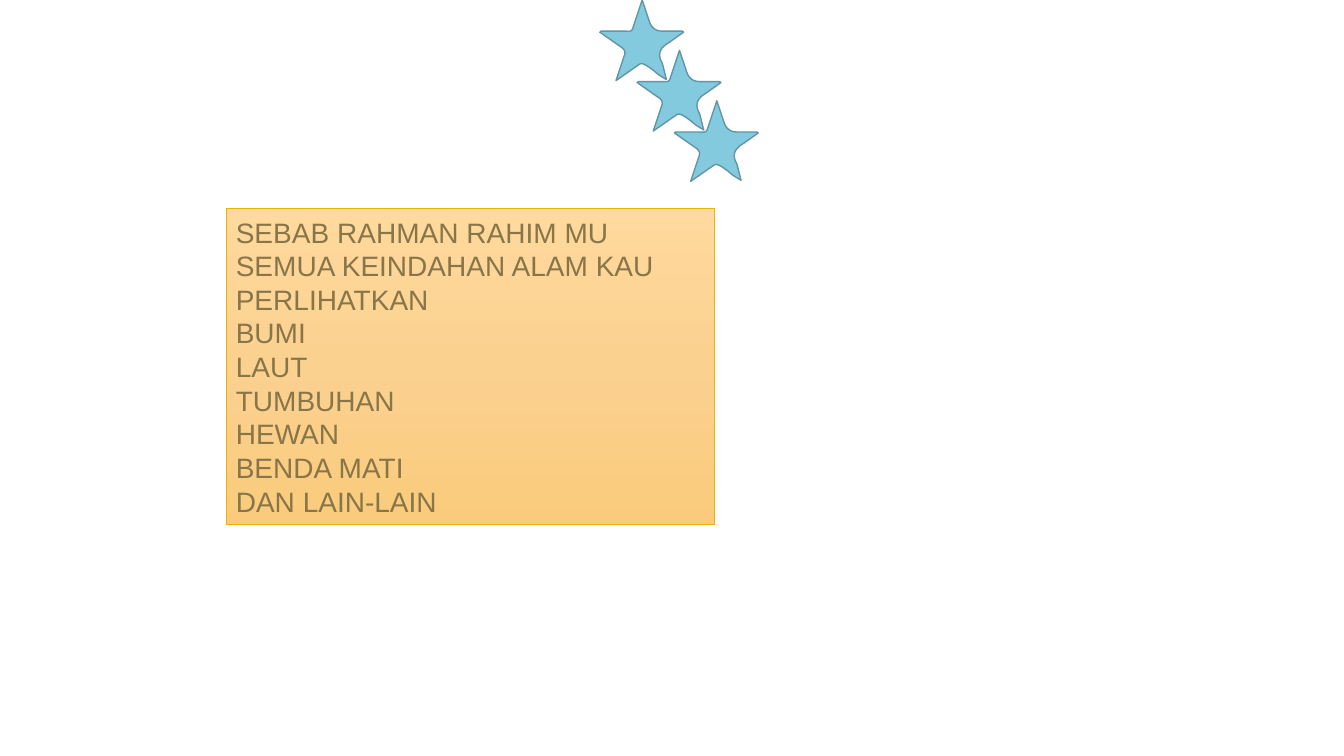
import copy

import pptx
import pptx.util
import pptx.dml.color
import pptx.enum.shapes
import pptx.enum.text
import pptx.oxml.ns

WIDTH, HEIGHT = 13.33, 7.5
COLORS = {
    "box_top": "FFD99D",
    "box_middle": "FBD190",
    "box_bottom": "FACB7C",
    "box_line": "EDB300",
    "text": "887548",
    "star": "84CADF",
    "star_line": "6295A5",
}
BOX_STOPS = [(0, "box_top"), (0.5, "box_middle"), (1, "box_bottom")]
LINES = [
    "SEBAB RAHMAN RAHIM MU",
    "SEMUA KEINDAHAN ALAM KAU PERLIHATKAN",
    "BUMI",
    "LAUT",
    "TUMBUHAN",
    "HEWAN",
    "BENDA MATI",
    "DAN LAIN-LAIN",
]

# Star: each tip is followed by a rounded inner corner (start, control, end)
STAR_TIPS = [(0.42, 0), (0.83, 0.32), (0.66, 0.79), (0.16, 0.8), (0, 0.32)]
STAR_CORNERS = [
    ((0.49, 0.21), (0.52, 0.31), (0.62, 0.31)),
    ((0.69, 0.42), (0.54, 0.5), (0.62, 0.63)),
    ((0.58, 0.74), (0.42, 0.6), (0.39, 0.64)),
    ((0.24, 0.56), (0.27, 0.5), (0.2, 0.46)),
    ((0.27, 0.31), (0.32, 0.32), (0.33, 0.27)),
]
STAR_SHOULDERS = {0: (0.82, 0.31), 4: (0.01, 0.31)}
STAR_COUNT = 3
STAR_LEFT, STAR_TOP = 5.95, 0
STAR_STEP_X, STAR_STEP_Y = 0.37, 0.5
CURVE_STEPS = 6


def color(name):
    return pptx.dml.color.RGBColor.from_string(COLORS[name])


def set_line(shape, name, width):
    shape.line.color.rgb = color(name)
    shape.line.width = pptx.util.Pt(width)
    shape.shadow.inherit = False


def write_text(shape, lines, *, font, size, color_name, align, anchor):
    frame = shape.text_frame
    frame.word_wrap = True
    frame.auto_size = pptx.enum.text.MSO_AUTO_SIZE.SHAPE_TO_FIT_TEXT
    frame.vertical_anchor = anchor
    for index, line in enumerate(lines):
        paragraph = frame.add_paragraph() if index else frame.paragraphs[0]
        paragraph.alignment = align
        run = paragraph.add_run()
        run.text = line
        run.font.name = font
        run.font.size = pptx.util.Pt(size)
        run.font.color.rgb = color(color_name)


def add_gradient_box(slide, left, top, width, height):
    shape = slide.shapes.add_shape(
        pptx.enum.shapes.MSO_SHAPE.RECTANGLE,
        *(pptx.util.Inches(value) for value in (left, top, width, height)))
    shape.fill.gradient()
    shape.fill.gradient_angle = 270
    # The default gradient has two stops; add one for the middle
    first_stop = next(shape.element.iter(pptx.oxml.ns.qn("a:gs")))
    first_stop.addnext(copy.deepcopy(first_stop))
    for stop, (position, name) in zip(shape.fill.gradient_stops, BOX_STOPS):
        stop.position = position
        stop.color.rgb = color(name)
    set_line(shape, "box_line", 0.5)
    return shape


def curve_points(start, control, end):
    for step in range(CURVE_STEPS + 1):
        t = step / CURVE_STEPS
        yield tuple((1 - t) ** 2 * a + 2 * t * (1 - t) * b + t ** 2 * c
                    for a, b, c in zip(start, control, end))


def add_star(slide, left, top):
    points = []
    for index, (tip, corner) in enumerate(zip(STAR_TIPS, STAR_CORNERS)):
        points += [tip, *curve_points(*corner)]
        if index == 0:
            points.append(STAR_SHOULDERS[0])
        elif index == 4:
            points.insert(-CURVE_STEPS - 1, STAR_SHOULDERS[4])
    points = [(pptx.util.Inches(left + x), pptx.util.Inches(top + y))
              for x, y in points]
    builder = slide.shapes.build_freeform(*points[0])
    builder.add_line_segments(points[1:], close=True)
    star = builder.convert_to_shape()
    star.fill.solid()
    star.fill.fore_color.rgb = color("star")
    set_line(star, "star_line", 1)


def main():
    presentation = pptx.Presentation()
    presentation.slide_width = pptx.util.Inches(WIDTH)
    presentation.slide_height = pptx.util.Inches(HEIGHT)
    slide = presentation.slides.add_slide(presentation.slide_layouts[6])

    # Text box
    box = add_gradient_box(slide, 2.24, 2.07, 4.85, 3.13)
    write_text(box, LINES, font="Arial", size=20, color_name="text",
               align=pptx.enum.text.PP_ALIGN.LEFT,
               anchor=pptx.enum.text.MSO_ANCHOR.MIDDLE)

    # Descending row of stars
    for index in range(STAR_COUNT):
        add_star(slide, STAR_LEFT + index * STAR_STEP_X,
                 STAR_TOP + index * STAR_STEP_Y)

    presentation.save("out.pptx")


if __name__ == "__main__":
    main()
